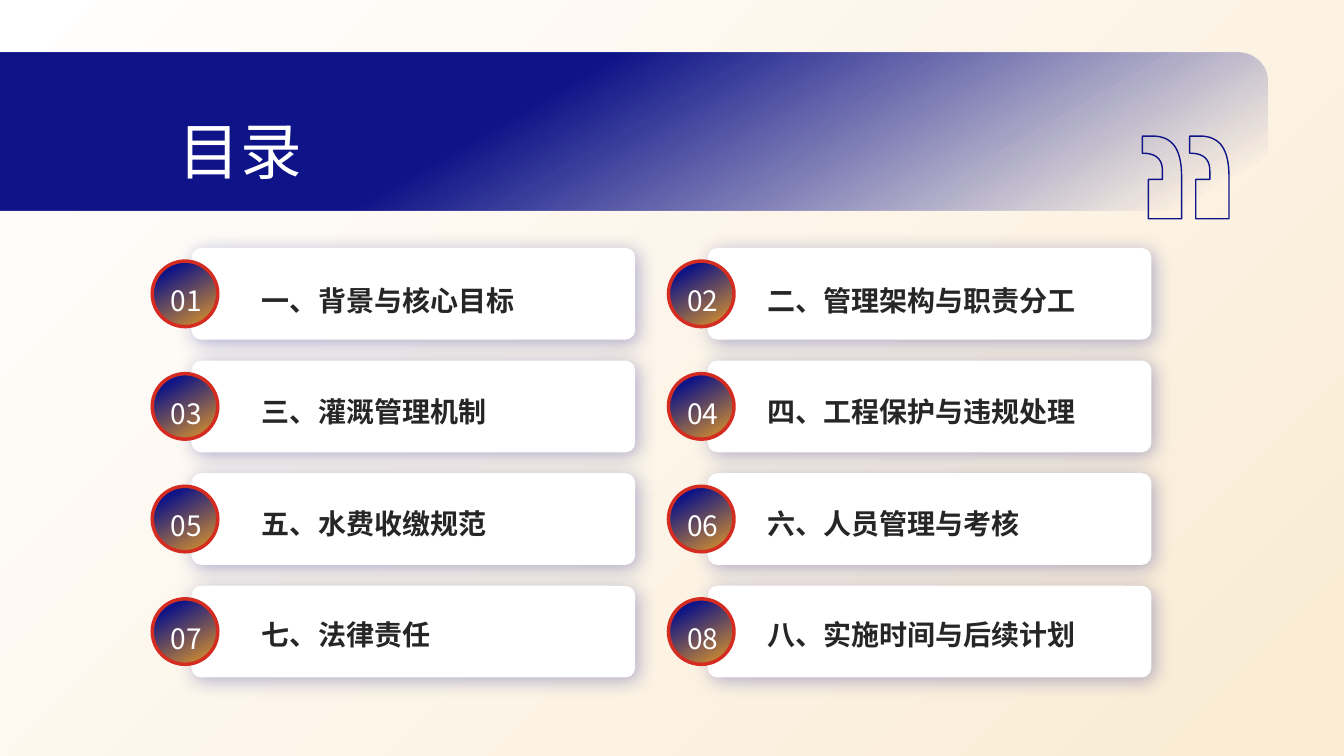
from lxml import etree
from pptx import Presentation
from pptx import util as u
from pptx.dml.color import RGBColor
from pptx.enum import shapes, text
from pptx.oxml.ns import qn

tint = RGBColor.from_string
NAVY, WHITE, FONT = "0E1488", "FFFFFF", "Noto Sans CJK SC"
WIDE, HIGH = 13.33, 7.5


def blend(shape, stops, angle):
    """Fill with a two-stop gradient; the angle runs clockwise."""
    shape.shadow.inherit = False
    shape.fill.gradient()
    shape.fill.gradient_angle = 360 - angle
    for stop, (place, color) in zip(shape.fill.gradient_stops, stops):
        stop.position = place / 100
        stop.color.rgb = tint(color)


def write(shape, words, box, size, color, lead, bold=False, align="LEFT", anchor="TOP"):
    shape.left, shape.top, shape.width, shape.height = map(u.Inches, box)
    frame = shape.text_frame
    frame.text = words
    frame.auto_size = text.MSO_AUTO_SIZE.NONE
    frame.word_wrap = True
    frame.vertical_anchor = getattr(text.MSO_ANCHOR, anchor)
    par = frame.paragraphs[0]
    par.alignment = getattr(text.PP_ALIGN, align)
    par.line_spacing = lead
    font = par.font
    font.name, font.size, font.bold = FONT, u.Pt(size), bold
    font.color.rgb = tint(color)
    etree.SubElement(font._element, qn("a:ea"), typeface=FONT)


deck = Presentation()
deck.slide_width, deck.slide_height = u.Inches(WIDE), u.Inches(HIGH)
slide = deck.slides.add_slide(deck.slide_layouts[5])
items = slide.shapes
KIND = shapes.MSO_SHAPE

back = items.add_shape(KIND.RECTANGLE, 0, 0, deck.slide_width, deck.slide_height)
blend(back, [(0, WHITE), (100, "FAEBD3")], 45)
back.line.fill.background()

# Outlines: a pair is a corner, six numbers are a cubic curve
banner = [(0, 0.52), (12.27, 0.52), (12.44, 0.52, 12.57, 0.65, 12.57, 0.82),
          (12.57, 1.78), (12.57, 1.95, 12.44, 2.09, 12.27, 2.09), (0, 2.09)]
quote = [(12.19, 2.17), (12.19, 1.75), (12.19, 1.48, 12.1, 1.35, 11.9, 1.35),
         (11.8, 1.35), (11.8, 1.52), (11.94, 1.52, 12, 1.58, 12, 1.7),
         (12, 1.78), (11.86, 1.78), (11.86, 2.17)]
twin = [tuple(v - 0.47 if i % 2 == 0 else v for i, v in enumerate(step)) for step in quote]

drawn = []
for group in ([banner], [quote, twin]):
    pen = None
    for steps in group:
        dots = []
        for step in steps:
            if len(step) == 2:
                dots.append(step)
                continue
            knots = [dots[-1], step[:2], step[2:4], step[4:]]
            for n in range(1, 17):
                t = n / 16
                parts = ((1 - t) ** 3, 3 * t * (1 - t) ** 2, 3 * t * t * (1 - t), t ** 3)
                dots.append(tuple(sum(p * k[axis] for p, k in zip(parts, knots))
                                  for axis in (0, 1)))
        dots = [(u.Inches(x), u.Inches(y)) for x, y in dots]
        if pen:
            pen.move_to(*dots[0])
        else:
            pen = items.build_freeform(*dots[0])
        pen.add_line_segments(dots[1:], close=True)
    drawn.append(pen.convert_to_shape())

band, marks = drawn
blend(band, [(40, NAVY), (94, NAVY)], 60)
band.line.fill.background()
clear = band._element.spPr.findall(".//" + qn("a:srgbClr"))[-1]
etree.SubElement(clear, qn("a:alpha"), val="0")
marks.shadow.inherit = False
marks.fill.background()
marks.line.color.rgb, marks.line.width = tint(NAVY), u.Pt(1)

title = items.title
write(title, "目录", (1.67, 1, 1.44, 0.84), 44, WHITE, 1.1)
band._element.addnext(title._element)

topics = ["一、背景与核心目标", "二、管理架构与职责分工", "三、灌溉管理机制",
          "四、工程保护与违规处理", "五、水费收缴规范", "六、人员管理与考核",
          "七、法律责任", "八、实施时间与后续计划"]
LEFT, TOP, COL, ROW = 1.9, 2.46, 5.12, 1.117

for n, topic in enumerate(topics):
    row, col = divmod(n, 2)
    x, y = LEFT + col * COL, TOP + row * ROW

    card = items.add_shape(KIND.ROUNDED_RECTANGLE, *map(u.Inches, (x, y, 4.4, 0.91)))
    card.adjustments[0] = 0.106
    card.fill.solid()
    card.fill.fore_color.rgb = tint(WHITE)
    card.line.fill.background()
    card.shadow.inherit = False
    glow = etree.SubElement(card._element.spPr.find(qn("a:effectLst")), qn("a:outerShdw"),
                            blurRad=str(u.Pt(14)), dist=str(u.Pt(3)), dir="2700000",
                            algn="ctr", rotWithShape="0")
    shade = etree.SubElement(glow, qn("a:srgbClr"), val=NAVY)
    etree.SubElement(shade, qn("a:alpha"), val="32000")

    disc = items.add_shape(KIND.OVAL, *map(u.Inches, (x - 0.39, y + 0.13, 0.65, 0.65)))
    blend(disc, [(18, NAVY), (100, "E79C25")], 60)
    disc.line.color.rgb, disc.line.width = tint("D52C22"), u.Pt(2.5)

    write(items.add_textbox(0, 0, 0, 0), f"{n + 1:02}", (x - 0.38, y + 0.27, 0.66, 0.5),
          20, WHITE, 1.1, align="CENTER")
    write(items.add_textbox(0, 0, 0, 0), topic,
          (2.5 + col * 5.01, 2.48 + row * 1.107, 3.8 + col * 0.11, 0.89),
          20, "262626", 1.3, bold=True, anchor="MIDDLE")

deck.save("out.pptx")
